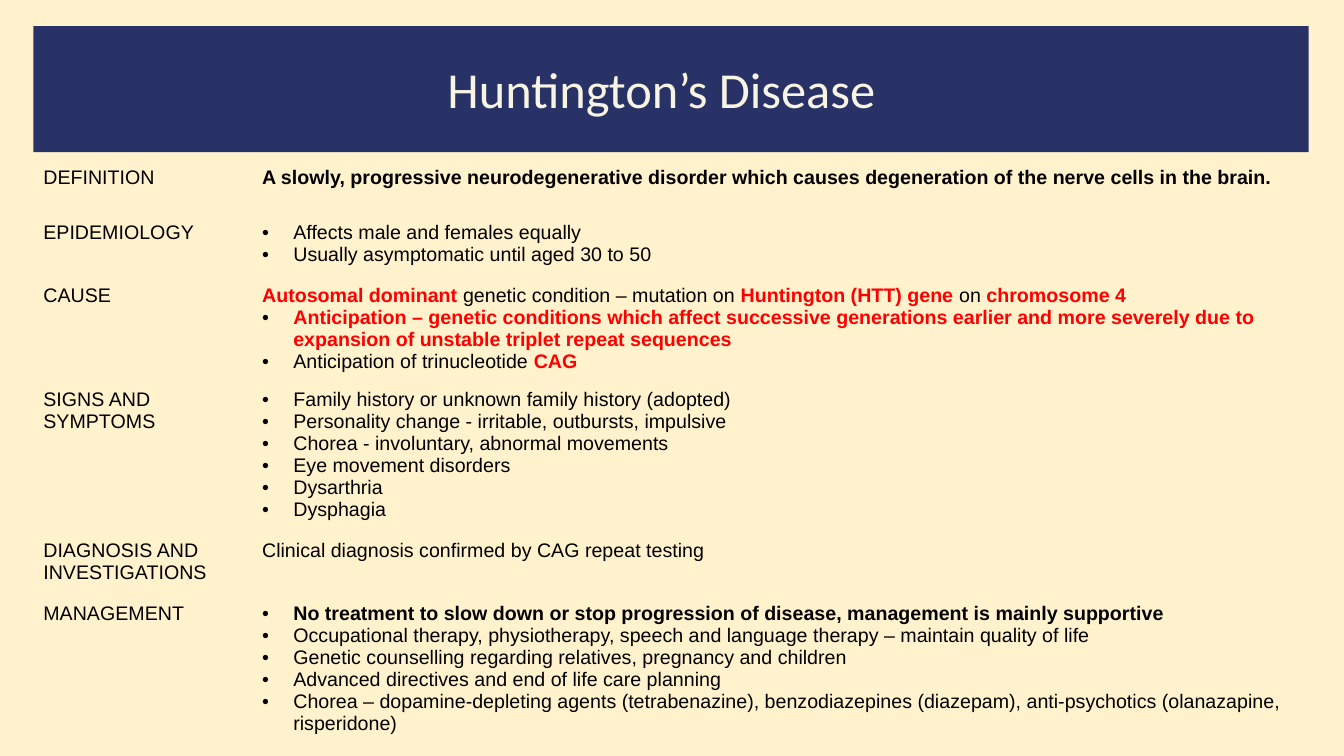
from lxml import etree
from pptx import Presentation
from pptx.dml.color import RGBColor
from pptx.enum.shapes import MSO_SHAPE
from pptx.oxml.ns import qn
from pptx.util import Inches, Pt

RECTANGLE = MSO_SHAPE.RECTANGLE
CREAM = RGBColor(0xFF, 0xF2, 0xCC)
NAVY = RGBColor(0x29, 0x32, 0x67)
IVORY = RGBColor(0xF8, 0xF4, 0xE4)
BLACK = RGBColor(0, 0, 0)
RED = RGBColor(0xFF, 0, 0)

PLAIN = (BLACK, False)
STRONG = (BLACK, True)
KEY = (RED, True)

TITLE = "Huntington’s Disease"
SECTIONS = [
    ("DEFINITION", 0.55, [
        (False, [("A slowly, progressive neurodegenerative disorder which causes "
                  "degeneration of the nerve cells in the brain.", STRONG)]),
    ]),
    ("EPIDEMIOLOGY", 0.62, [
        (True, [("Affects male and females equally", PLAIN)]),
        (True, [("Usually asymptomatic until aged 30 to 50", PLAIN)]),
    ]),
    ("CAUSE", 1.03, [
        (False, [("Autosomal dominant ", KEY), ("genetic condition – mutation on ", PLAIN),
                 ("Huntington (HTT) gene ", KEY), ("on ", PLAIN), ("chromosome 4", KEY)]),
        (True, [("Anticipation – genetic conditions which affect successive generations "
                 "earlier and more severely due to expansion of unstable triplet repeat "
                 "sequences", KEY)]),
        (True, [("Anticipation of trinucleotide ", PLAIN), ("CAG", KEY)]),
    ]),
    ("SIGNS AND SYMPTOMS", 1.5, [
        (True, [("Family history or unknown family history (adopted)", PLAIN)]),
        (True, [("Personality change - irritable, outbursts, impulsive", PLAIN)]),
        (True, [("Chorea - involuntary, abnormal movements", PLAIN)]),
        (True, [("Eye movement disorders", PLAIN)]),
        (True, [("Dysarthria", PLAIN)]),
        (True, [("Dysphagia", PLAIN)]),
    ]),
    ("DIAGNOSIS AND INVESTIGATIONS", 0.62, [
        (False, [("Clinical diagnosis confirmed by CAG repeat testing", PLAIN)]),
    ]),
    ("MANAGEMENT", 1.42, [
        (True, [("No treatment to slow down or stop progression of disease, "
                 "management is mainly supportive", STRONG)]),
        (True, [("Occupational therapy, physiotherapy, speech and language therapy "
                 "– maintain quality of life", PLAIN)]),
        (True, [("Genetic counselling regarding relatives, pregnancy and children", PLAIN)]),
        (True, [("Advanced directives and end of life care planning", PLAIN)]),
        (True, [("Chorea – dopamine-depleting agents (tetrabenazine), benzodiazepines "
                 "(diazepam), anti-psychotics (olanazapine, risperidone)", PLAIN)]),
    ]),
]
LEFT = 0.33
TABLE_TOP = 1.6
COLUMN_WIDTHS = (2.17, 10.47)
INDENT = Inches(0.31)
NO_GRID_STYLE = "{2D5ABB26-0587-4C30-8999-92F81FD0307C}"


def add_bullet(para):
    properties = para._p.get_or_add_pPr()
    properties.set("marL", str(INDENT))
    properties.set("indent", str(-INDENT))
    colour = etree.SubElement(properties, qn("a:buClr"))
    etree.SubElement(colour, qn("a:srgbClr")).set("val", str(BLACK))
    etree.SubElement(properties, qn("a:buFont")).set("typeface", "Arial")
    etree.SubElement(properties, qn("a:buChar")).set("char", "•")


def fill_cell(cell, paragraphs):
    cell.fill.background()
    frame = cell.text_frame
    for index, (bulleted, spans) in enumerate(paragraphs):
        para = frame.add_paragraph() if index else frame.paragraphs[0]
        if bulleted:
            add_bullet(para)
        para.font.name = "Arial"
        para.font.size = Pt(14)
        for text, (colour, bold) in spans:
            span = para.add_run()
            span.text = text
            span.font.color.rgb = colour
            span.font.bold = bold


def add_title(page):
    banner = page.shapes.add_shape(
        RECTANGLE, Inches(LEFT), Inches(0.26), Inches(12.65), Inches(1.25))
    banner.shadow.inherit = False
    banner.fill.solid()
    banner.fill.fore_color.rgb = NAVY
    banner.line.fill.background()
    box = page.shapes.add_textbox(Inches(4.34), Inches(0.53), Inches(5.57), Inches(0.71))
    box.text_frame.word_wrap = True
    para = box.text_frame.paragraphs[0]
    para.text = TITLE
    para.font.name = "Calibri"
    para.font.size = Pt(36)
    para.font.color.rgb = IVORY


def add_sections(page):
    height = sum(section[1] for section in SECTIONS)
    frame = page.shapes.add_table(
        len(SECTIONS), len(COLUMN_WIDTHS), Inches(LEFT), Inches(TABLE_TOP),
        Inches(sum(COLUMN_WIDTHS)), Inches(height))
    table = frame.table
    table.first_row = False
    table.horz_banding = False
    frame._element.find(".//" + qn("a:tableStyleId")).text = NO_GRID_STYLE
    for column, width in zip(table.columns, COLUMN_WIDTHS):
        column.width = Inches(width)
    for row, (label, row_height, paragraphs) in zip(table.rows, SECTIONS):
        row.height = Inches(row_height)
        fill_cell(row.cells[0], [(False, [(label, PLAIN)])])
        fill_cell(row.cells[1], paragraphs)


def main():
    deck = Presentation()
    deck.slide_width = Inches(13.33)
    deck.slide_height = Inches(7.5)
    page = deck.slides.add_slide(deck.slide_layouts[6])
    page.background.fill.solid()
    page.background.fill.fore_color.rgb = CREAM
    add_title(page)
    add_sections(page)
    deck.save("out.pptx")


if __name__ == "__main__":
    main()
